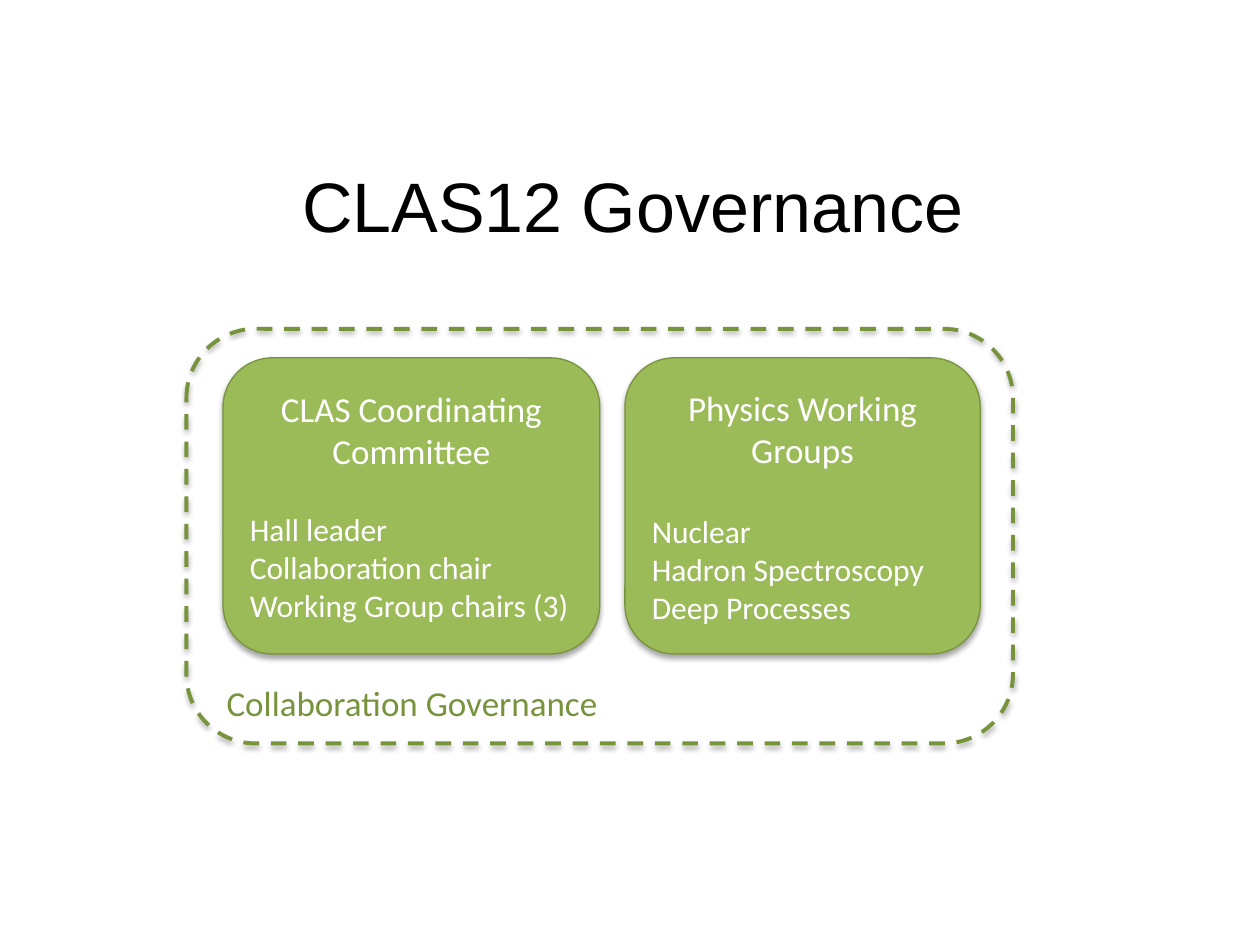
from lxml.etree import SubElement
from pptx import Presentation
from pptx.dml.color import RGBColor
from pptx.enum.dml import MSO_LINE
from pptx.enum.shapes import MSO_SHAPE
from pptx.enum.text import MSO_ANCHOR, PP_ALIGN
from pptx.oxml.ns import qn
from pptx.util import Inches, Pt

COLORS = {name: RGBColor.from_string(value) for name, value in {
    "black": "000000", "white": "FFFFFF", "green": "9BBB59", "dark green": "77933C",
}.items()}

presentation = Presentation()
presentation.slide_width, presentation.slide_height = Inches(10), Inches(7.5)
slide = presentation.slides.add_slide(presentation.slide_layouts[6])


def add_rounded_box(left, top, width, height, line_width):
    """Add an unfilled, green-outlined rounded box with a soft shadow below it."""
    shape = slide.shapes.add_shape(MSO_SHAPE.ROUNDED_RECTANGLE, Inches(left), Inches(top),
                                   Inches(width), Inches(height))
    shape.fill.background()
    shape.line.color.rgb = COLORS["dark green"]
    shape.line.width = Pt(line_width)
    shape.shadow.inherit = False
    effects = shape._element.spPr.find(qn("a:effectLst"))
    shadow = SubElement(effects, qn("a:outerShdw"), blurRad=str(Pt(3.1)), dist=str(Pt(1.8)),
                        dir="5400000", rotWithShape="0")
    color = SubElement(shadow, qn("a:srgbClr"), val="000000")
    SubElement(color, qn("a:alpha"), val="35000")
    return shape


def format_paragraph(paragraph, font_name, size, color, alignment=PP_ALIGN.LEFT):
    paragraph.alignment = alignment
    paragraph.font.name = font_name
    paragraph.font.size = Pt(size)
    paragraph.font.color.rgb = COLORS[color]


title = slide.shapes.add_textbox(Inches(0.52), Inches(1.24), Inches(9), Inches(0.77))
title.text_frame.word_wrap = True
title.text_frame.vertical_anchor = MSO_ANCHOR.MIDDLE
title.text_frame.text = "CLAS12 Governance"
format_paragraph(title.text_frame.paragraphs[0], "Arial", 40, "black", PP_ALIGN.CENTER)

# Left, width, heading, gap below the heading in points, members
groups = [
    (1.77, 2.99, "CLAS Coordinating Committee", 22,
     ["Hall leader", "Collaboration chair", "Working Group chairs (3)"]),
    (4.96, 2.82, "Physics Working Groups", 24,
     ["Nuclear", "Hadron Spectroscopy", "Deep Processes"]),
]
for left, width, heading, gap, members in groups:
    box = add_rounded_box(left, 2.84, width, 2.35, 0.75)
    box.fill.solid()
    box.fill.fore_color.rgb = COLORS["green"]
    text_frame = box.text_frame
    text_frame.word_wrap = True
    text_frame.vertical_anchor = MSO_ANCHOR.MIDDLE
    text_frame.text = "\n".join([heading, *members])
    heading_paragraph, *member_paragraphs = text_frame.paragraphs
    format_paragraph(heading_paragraph, "Calibri", 20, "white", PP_ALIGN.CENTER)
    for paragraph in member_paragraphs:
        format_paragraph(paragraph, "Calibri", 18, "white")
    member_paragraphs[0].space_before = Pt(gap)

governance_frame = add_rounded_box(1.48, 2.61, 6.56, 3.29, 2.25)
governance_frame.line.dash_style = MSO_LINE.DASH

label = slide.shapes.add_textbox(Inches(1.7), Inches(5.36), Inches(3.3), Inches(0.36))
label.text_frame.word_wrap = True
label.text_frame.text = "Collaboration Governance"
format_paragraph(label.text_frame.paragraphs[0], "Calibri", 20, "dark green")

presentation.save("out.pptx")
